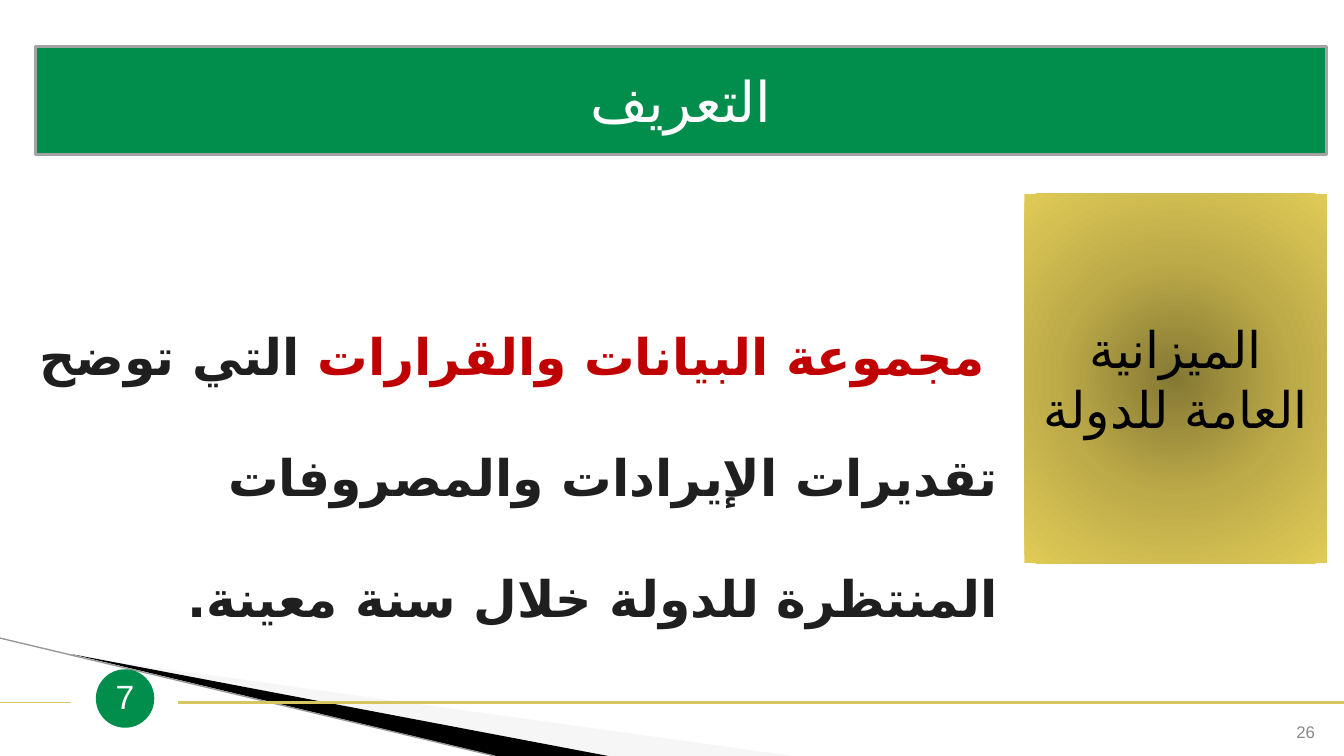
from dataclasses import dataclass

import lxml.etree
import pptx
import pptx.dml.color
import pptx.enum.shapes
import pptx.enum.text
import pptx.oxml
import pptx.oxml.ns
import pptx.util

RGBColor = pptx.dml.color.RGBColor
ALIGN = pptx.enum.text.PP_ALIGN
ANCHOR = pptx.enum.text.MSO_ANCHOR
SHAPE = pptx.enum.shapes.MSO_SHAPE
qn = pptx.oxml.ns.qn

GREEN = RGBColor(0x01, 0x8E, 0x4C)
GOLD = RGBColor(0xD7, 0xC5, 0x60)
GOLD_STOPS = ((0, RGBColor(0x85, 0x78, 0x34)), (50, RGBColor(0xBD, 0xAB, 0x49)),
              (100, RGBColor(0xE0, 0xCB, 0x57)))
RED = RGBColor(0xC0, 0x00, 0x00)
INK = RGBColor(0x1F, 0x1F, 0x1F)
BLACK = RGBColor(0x00, 0x00, 0x00)
WHITE = RGBColor(0xFF, 0xFF, 0xFF)
BORDER_GRAY = RGBColor(0xA3, 0xA3, 0xA3)
NUMBER_GRAY = RGBColor(0x89, 0x89, 0x89)
PALE_GRAY = RGBColor(0xEA, 0xEA, 0xEA)
HAIRLINE_GRAY = RGBColor(0x96, 0x96, 0x96)

ARABIC_FONT = "DejaVu Sans"
DIGIT_FONT = "Arial"

SLIDE_WIDTH = pptx.util.Inches(13.33)
SLIDE_HEIGHT = pptx.util.Inches(7.5)
COLUMN = SLIDE_WIDTH / 100
ROW = SLIDE_HEIGHT / 100


@dataclass(frozen=True)
class Area:
    """A rectangle in grid columns and rows."""
    column: float
    row: float
    columns: float
    rows: float

    def lengths(self) -> tuple[int, int, int, int]:
        return (round(self.column * COLUMN), round(self.row * ROW),
                round(self.columns * COLUMN), round(self.rows * ROW))


@dataclass(frozen=True)
class Piece:
    text: str
    color: RGBColor


@dataclass(frozen=True)
class TextStyle:
    font: str
    size: int
    bold: bool = False
    align: ALIGN = ALIGN.CENTER
    anchor: ANCHOR = ANCHOR.MIDDLE
    spacing: float = 1.0
    complex_font: str = ARABIC_FONT


@dataclass(frozen=True)
class Wedge:
    points: tuple[tuple[float, float], ...]
    color: RGBColor
    opacity: int = 100


@dataclass(frozen=True)
class Rule:
    start: tuple[float, float]
    end: tuple[float, float]
    color: RGBColor
    width: float = 1


TITLE_AREA = Area(2.63, 6.13, 96.1, 14.27)
TERM_AREA = Area(76.22, 25.6, 22.51, 48.93)
DEFINITION_AREA = Area(1.28, 34.4, 73.74, 40.8)
BADGE_AREA = Area(7.13, 88.53, 4.35, 7.73)
NUMBER_AREA = Area(94.6, 93.47, 3.98, 5.33)

WEDGES = (
    Wedge(((5.48, 86.8), (59, 100), (45.24, 100)), PALE_GRAY, 40),
    Wedge(((5.33, 86.53), (45.24, 100), (36.9, 100)), BLACK),
)
HAIRLINE = Rule((0, 84.4), (36.8, 100), HAIRLINE_GRAY, 0.95)
FOOTER_RULES = (
    Rule((13.28, 92.93), (100, 92.93), GOLD, 1.5),
    Rule((0, 92.93), (5.25, 92.93), GOLD),
)
DEFINITION = (
    Piece("مجموعة البيانات والقرارات ", RED),
    Piece("التي توضح تقديرات الإيرادات والمصروفات المنتظرة للدولة خلال سنة معينة.", INK),
)


def place(shape, area: Area) -> None:
    shape.left, shape.top, shape.width, shape.height = area.lengths()


def write(shape, pieces: tuple[Piece, ...], style: TextStyle):
    """Fill a shape with one right-to-left paragraph and return it."""
    frame = shape.text_frame
    frame.word_wrap = True
    frame.auto_size = pptx.enum.text.MSO_AUTO_SIZE.NONE
    frame.vertical_anchor = style.anchor
    paragraph = frame.paragraphs[0]
    paragraph.alignment = style.align
    paragraph.line_spacing = style.spacing
    paragraph._p.get_or_add_pPr().set("rtl", "1")
    for piece in pieces:
        run = paragraph.add_run()
        run.text = piece.text
        run.font.name = style.font
        run.font.size = pptx.util.Pt(style.size)
        run.font.bold = style.bold
        run.font.color.rgb = piece.color
        complex_font = lxml.etree.SubElement(run._r.get_or_add_rPr(), qn("a:cs"))
        complex_font.set("typeface", style.complex_font)
    return paragraph


def add_plain_shape(slide, kind: SHAPE, area: Area, color: RGBColor):
    shape = slide.shapes.add_shape(kind, *area.lengths())
    shape.shadow.inherit = False
    shape.fill.solid()
    shape.fill.fore_color.rgb = color
    shape.line.fill.background()
    return shape


def add_wedge(slide, wedge: Wedge) -> None:
    points = [(round(x * COLUMN), round(y * ROW)) for x, y in wedge.points]
    builder = slide.shapes.build_freeform(*points[0])
    builder.add_line_segments(points[1:], close=True)
    shape = builder.convert_to_shape()
    shape.shadow.inherit = False
    shape.fill.solid()
    shape.fill.fore_color.rgb = wedge.color
    shape.line.fill.background()
    if wedge.opacity < 100:
        color = shape._element.spPr.find(qn("a:solidFill")).find(qn("a:srgbClr"))
        lxml.etree.SubElement(color, qn("a:alpha")).set("val", str(wedge.opacity * 1000))


def add_rule(slide, rule: Rule) -> None:
    ends = [round(share * unit) for point in (rule.start, rule.end)
            for share, unit in zip(point, (COLUMN, ROW))]
    connector = slide.shapes.add_connector(pptx.enum.shapes.MSO_CONNECTOR.STRAIGHT, *ends)
    connector.line.color.rgb = rule.color
    connector.line.width = pptx.util.Pt(rule.width)
    lxml.etree.SubElement(connector._element.spPr, qn("a:effectLst"))


def set_radial_fill(shape, stops: tuple[tuple[int, RGBColor], ...]) -> None:
    stop_xml = "".join(f'<a:gs pos="{position * 1000}"><a:srgbClr val="{color}"/></a:gs>'
                       for position, color in stops)
    gradient = pptx.oxml.parse_xml(
        f'<a:gradFill {pptx.oxml.ns.nsdecls("a")}><a:gsLst>{stop_xml}</a:gsLst>'
        '<a:path path="circle"><a:fillToRect l="50000" t="50000" r="50000" b="50000"/>'
        '</a:path></a:gradFill>')
    properties = shape._element.spPr
    properties.replace(properties.find(qn("a:solidFill")), gradient)


def main() -> None:
    presentation = pptx.Presentation()
    presentation.slide_width = SLIDE_WIDTH
    presentation.slide_height = SLIDE_HEIGHT
    slide = presentation.slides.add_slide(presentation.slide_layouts[5])

    for wedge in WEDGES:
        add_wedge(slide, wedge)
    for rule in (HAIRLINE, *FOOTER_RULES):
        add_rule(slide, rule)

    title = slide.shapes.title
    place(title, TITLE_AREA)
    title.fill.solid()
    title.fill.fore_color.rgb = GREEN
    title.line.color.rgb = BORDER_GRAY
    title.line.width = pptx.util.Pt(2.25)
    write(title, (Piece("التعريف", WHITE),), TextStyle("Noto Sans Mono", 40))

    term = add_plain_shape(slide, SHAPE.RECTANGLE, TERM_AREA, GOLD)
    set_radial_fill(term, GOLD_STOPS)
    write(term, (Piece("الميزانية العامة للدولة", BLACK),), TextStyle("Karla", 36))

    definition = slide.shapes.add_textbox(*DEFINITION_AREA.lengths())
    paragraph = write(definition, DEFINITION,
                      TextStyle("Karla", 36, True, ALIGN.RIGHT, ANCHOR.TOP, 2.0))
    paragraph._p.get_or_add_pPr().set("indent", str(round(COLUMN)))

    badge = add_plain_shape(slide, SHAPE.OVAL, BADGE_AREA, GREEN)
    frame = badge.text_frame
    frame.margin_left = frame.margin_right = frame.margin_top = frame.margin_bottom = 0
    write(badge, (Piece("7", WHITE),),
          TextStyle("Calibri", 24, spacing=0.9, complex_font=DIGIT_FONT))

    number = slide.shapes.add_textbox(*NUMBER_AREA.lengths())
    write(number, (Piece("26", NUMBER_GRAY),),
          TextStyle("Calibri", 12, align=ALIGN.RIGHT, anchor=ANCHOR.BOTTOM,
                    complex_font=DIGIT_FONT))

    presentation.save("out.pptx")


if __name__ == "__main__":
    main()
